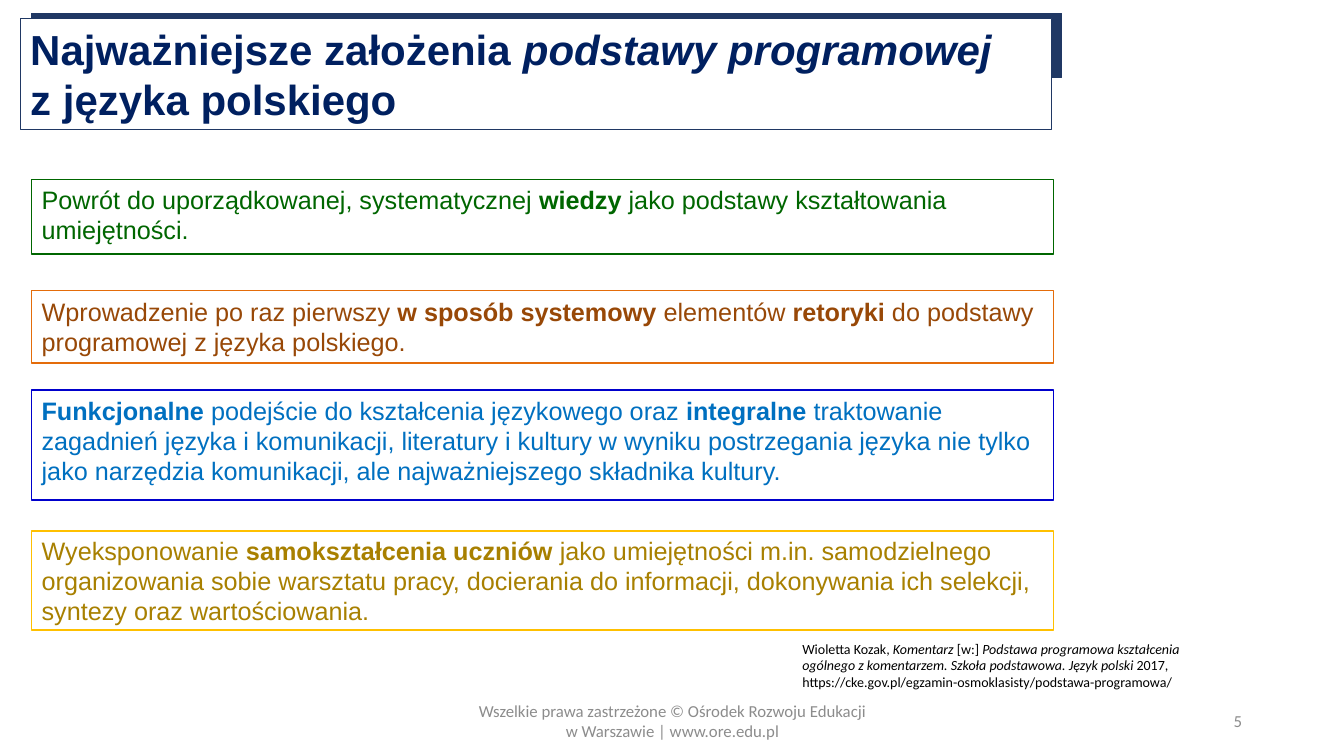
from dataclasses import dataclass

from pptx import Presentation
from pptx import util as u
from pptx.dml.color import RGBColor
from pptx.enum import shapes, text

SLIDE_WIDTH, SLIDE_HEIGHT = u.Inches(13.33), u.Inches(7.5)
CARD_LEFT, CARD_WIDTH = 2.36, 76.05
TITLE_ONLY = 5
NAVY, GREY = "203864", "8C8C8C"
TOP, MIDDLE = text.MSO_ANCHOR.TOP, text.MSO_ANCHOR.MIDDLE
LEFT, CENTER, RIGHT = text.PP_ALIGN.LEFT, text.PP_ALIGN.CENTER, text.PP_ALIGN.RIGHT


@dataclass(frozen=True)
class Area:
    """Left and width in percent of the slide width, top and height of its height."""
    left: float
    top: float
    width: float
    height: float

    def lengths(self) -> tuple[int, int, int, int]:
        return (int(SLIDE_WIDTH * self.left / 100), int(SLIDE_HEIGHT * self.top / 100),
                int(SLIDE_WIDTH * self.width / 100), int(SLIDE_HEIGHT * self.height / 100))


@dataclass(frozen=True)
class Style:
    size: float
    name: str
    color: str
    bold: bool = False
    emphasis: str = "bold"
    align: text.PP_ALIGN = LEFT
    anchor: text.MSO_ANCHOR = TOP


@dataclass(frozen=True)
class Card:
    top: float
    height: float
    line: str
    color: str
    anchor: text.MSO_ANCHOR
    wording: str


@dataclass(frozen=True)
class Note:
    area: Area
    style: Style
    lines: tuple[str, ...]


TITLE_AREA = Area(1.5, 2.4, 76.74, 14.8)
TITLE_BACKING = Area(2.33, 1.73, 76.67, 8.53)
TITLE_STYLE = Style(30, "Arial", "002060", bold=True, emphasis="italic")
TITLE_LINES = ("Najważniejsze założenia *podstawy programowej*", "z języka polskiego")

CARDS = (
    Card(23.73, 9.87, "006600", "006600", TOP,
         "Powrót do uporządkowanej, systematycznej *wiedzy* jako podstawy kształtowania "
         "umiejętności."),
    Card(38.4, 9.6, "E46C0A", "984807", MIDDLE,
         "Wprowadzenie po raz pierwszy *w sposób systemowy *elementów* retoryki* do podstawy "
         "programowej z języka polskiego."),
    Card(51.6, 14.53, "0000CC", "0070C0", TOP,
         "*Funkcjonalne* podejście do kształcenia językowego oraz *integralne* traktowanie "
         "zagadnień języka i komunikacji, literatury i kultury w wyniku postrzegania języka "
         "nie tylko jako narzędzia komunikacji, ale najważniejszego składnika kultury."),
    Card(70.27, 13.07, "FFC000", "A88000", MIDDLE,
         "Wyeksponowanie *samokształcenia uczniów *jako umiejętności m.in. samodzielnego "
         "organizowania sobie warsztatu pracy, docierania do informacji, dokonywania ich "
         "selekcji, syntezy oraz wartościowania."),
)

NOTES = (
    Note(Area(58.96, 84, 31.36, 8.13), Style(10, "Calibri", "000000", emphasis="italic"),
         ("Wioletta Kozak, *Komentarz *[w:] *Podstawa programowa kształcenia ogólnego "
          "z komentarzem. Szkoła podstawowa. Język polski *2017, "
          "https://cke.gov.pl/egzamin-osmoklasisty/podstawa-programowa/",)),
    Note(Area(33.16, 92.67, 33.76, 5.33),
         Style(12, "Calibri", GREY, align=CENTER, anchor=MIDDLE),
         ("Wszelkie prawa zastrzeżone © Ośrodek Rozwoju Edukacji",
          "w Warszawie | www.ore.edu.pl")),
    Note(Area(70.67, 92.67, 22.5, 5.33),
         Style(12, "Calibri", GREY, align=RIGHT, anchor=MIDDLE), ("5",)),
)


def rgb(color: str) -> RGBColor:
    return RGBColor.from_string(color)


def set_all(target, values: dict) -> None:
    for name, value in values.items():
        setattr(target, name, value)


def write(box, lines: tuple[str, ...], style: Style) -> None:
    """Fill the box; wording between asterisks gets the emphasis of the style."""
    frame = box.text_frame
    set_all(frame, {"word_wrap": True, "auto_size": text.MSO_AUTO_SIZE.NONE,
                    "vertical_anchor": style.anchor})
    for number, line in enumerate(lines):
        para = frame.add_paragraph() if number else frame.paragraphs[0]
        set_all(para, {"alignment": style.align, "line_spacing": 1.0})
        for index, wording in enumerate(line.split("*")):
            if not wording:
                continue
            span = para.add_run()
            span.text = wording
            set_all(span.font, {"size": u.Pt(style.size), "name": style.name,
                                "bold": style.bold, "italic": False})
            if index % 2:
                setattr(span.font, style.emphasis, True)
            span.font.color.rgb = rgb(style.color)


def paint(box, fill: str | None, line: str, width: float) -> None:
    if fill:
        box.fill.solid()
        box.fill.fore_color.rgb = rgb(fill)
    else:
        box.fill.background()
    box.line.color.rgb = rgb(line)
    box.line.width = u.Pt(width)


def add_rectangle(page, area: Area, fill: str | None, line: str, width: float):
    box = page.shapes.add_shape(shapes.MSO_SHAPE.RECTANGLE, *area.lengths())
    box.shadow.inherit = False
    paint(box, fill, line, width)
    return box


def add_title(page) -> None:
    title = page.shapes.title
    set_all(title, dict(zip(("left", "top", "width", "height"), TITLE_AREA.lengths())))
    paint(title, "FFFFFF", NAVY, 0.75)
    write(title, TITLE_LINES, TITLE_STYLE)
    backing = add_rectangle(page, TITLE_BACKING, NAVY, NAVY, 0.75)
    title._element.addprevious(backing._element)


def add_card(page, card: Card) -> None:
    area = Area(CARD_LEFT, card.top, CARD_WIDTH, card.height)
    box = add_rectangle(page, area, None, card.line, 1)
    write(box, (card.wording,), Style(18, "Arial", card.color, anchor=card.anchor))


def add_note(page, note: Note) -> None:
    write(page.shapes.add_textbox(*note.area.lengths()), note.lines, note.style)


def main() -> None:
    deck = Presentation()
    set_all(deck, {"slide_width": SLIDE_WIDTH, "slide_height": SLIDE_HEIGHT})
    page = deck.slides.add_slide(deck.slide_layouts[TITLE_ONLY])
    add_title(page)
    for card in CARDS:
        add_card(page, card)
    for note in NOTES:
        add_note(page, note)
    deck.save("out.pptx")


if __name__ == "__main__":
    main()
